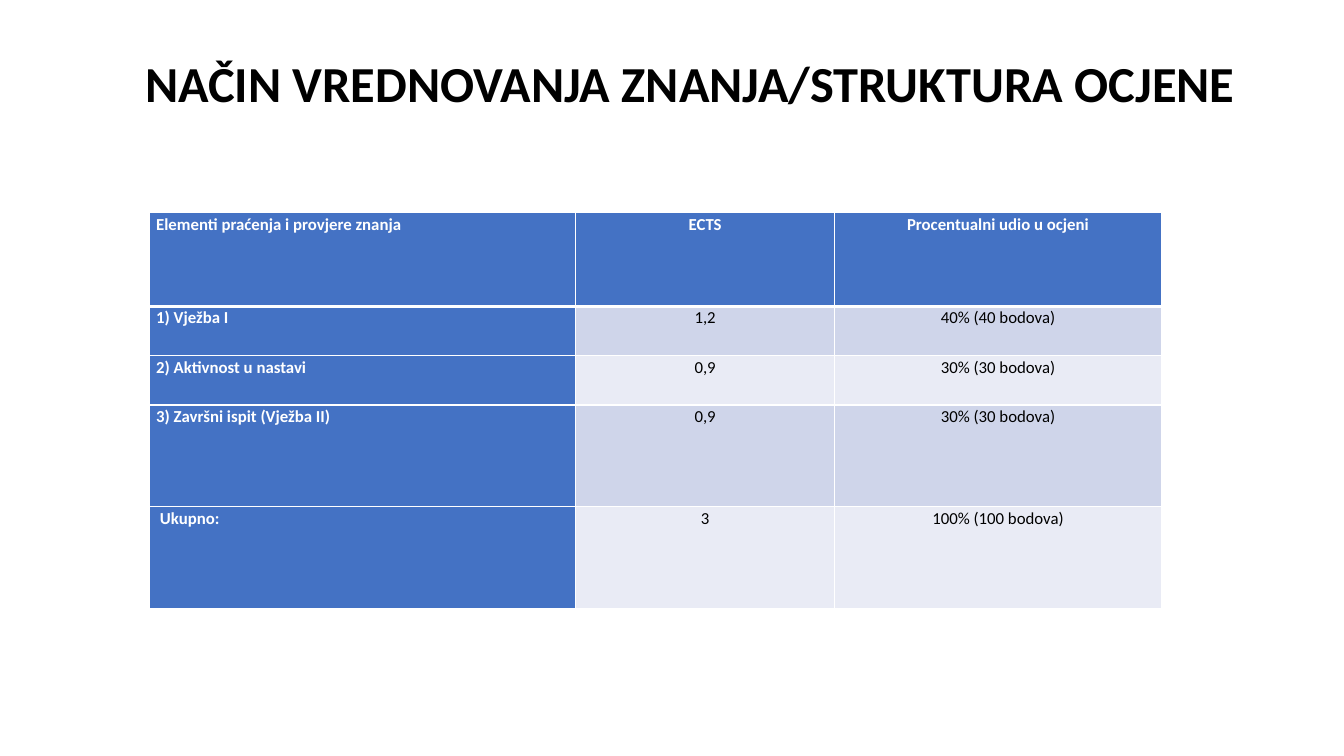
from dataclasses import dataclass

from lxml.etree import SubElement
from pptx import Presentation
from pptx.dml.color import RGBColor
from pptx.enum.text import MSO_ANCHOR, PP_ALIGN
from pptx.oxml.ns import qn
from pptx.util import Inches, Pt


@dataclass(frozen=True)
class Theme:
    font: str = "Calibri"
    title_size: int = 36
    table_size: int = 12
    ink: str = "000000"
    white: str = "FFFFFF"
    accent: str = "4472C4"
    bands: tuple = ("CFD5EA", "E9EBF5")
    thin_border: int = 1
    thick_border: int = 3


TITLE = "NAČIN VREDNOVANJA ZNANJA/STRUKTURA OCJENE"
GRADING = [
    ("Elementi praćenja i provjere znanja", "ECTS", "Procentualni udio u ocjeni"),
    ("1) Vježba I", "1,2", "40% (40 bodova)"),
    ("2) Aktivnost u nastavi", "0,9", "30% (30 bodova)"),
    ("3) Završni ispit (Vježba II)", "0,9", "30% (30 bodova)"),
    (" Ukupno:", "3", "100% (100 bodova)"),
]
# Percent of the slide's width and height
COLUMN_WIDTHS = (31.73, 19.28, 24.31)
ROW_HEIGHTS = (12.4, 6.53, 6.53, 13.47, 13.47)


class SlideBuilder:
    def __init__(self, presentation, theme):
        self.width = presentation.slide_width
        self.height = presentation.slide_height
        self.theme = theme
        self.slide = presentation.slides.add_slide(presentation.slide_layouts[6])

    def across(self, percent):
        return round(self.width * percent / 100)

    def down(self, percent):
        return round(self.height * percent / 100)

    def set_font(self, paragraph, size, color, bold):
        font = paragraph.font
        font.name, font.size, font.bold = self.theme.font, Pt(size), bold
        font.color.rgb = RGBColor.from_string(color)

    def title(self, text, left, top, width, height):
        box = self.slide.shapes.add_textbox(
            self.across(left), self.down(top), self.across(width), self.down(height))
        frame = box.text_frame
        frame.word_wrap = True
        frame.vertical_anchor = MSO_ANCHOR.TOP
        paragraph = frame.paragraphs[0]
        paragraph.text = text
        self.set_font(paragraph, self.theme.title_size, self.theme.ink, True)

    def table(self, rows, left, top, column_widths, row_heights):
        shape = self.slide.shapes.add_table(
            len(rows), len(column_widths), self.across(left), self.down(top),
            self.across(sum(column_widths)), self.down(sum(row_heights)))
        table = shape.table
        for column, width in zip(table.columns, column_widths):
            column.width = self.across(width)
        for row, height in zip(table.rows, row_heights):
            row.height = self.down(height)
        for row_index, texts in enumerate(rows):
            for column_index, text in enumerate(texts):
                self.cell(table.cell(row_index, column_index), text, row_index, column_index)

    def cell(self, cell, text, row_index, column_index):
        theme = self.theme
        is_heading = row_index == 0 or column_index == 0
        cell.margin_left = cell.margin_right = Inches(0.07)
        cell.margin_top = cell.margin_bottom = 0
        self.borders(cell, row_index)
        fill = theme.accent if is_heading else theme.bands[(row_index - 1) % 2]
        cell.fill.solid()
        cell.fill.fore_color.rgb = RGBColor.from_string(fill)
        paragraph = cell.text_frame.paragraphs[0]
        paragraph.text = text
        paragraph.alignment = PP_ALIGN.CENTER if column_index else PP_ALIGN.JUSTIFY
        paragraph.line_spacing = 1.07
        self.set_font(paragraph, theme.table_size,
                      theme.white if is_heading else theme.ink, is_heading)

    def borders(self, cell, row_index):
        """Draw white cell edges, with a thick one below the header row."""
        thick_edge = {0: "lnB", 1: "lnT"}.get(row_index)
        properties = cell._tc.get_or_add_tcPr()
        for edge in ("lnL", "lnR", "lnT", "lnB"):
            width = self.theme.thick_border if edge == thick_edge else self.theme.thin_border
            line = SubElement(properties, qn(f"a:{edge}"), w=str(Pt(width)))
            fill = SubElement(line, qn("a:solidFill"))
            SubElement(fill, qn("a:srgbClr"), val=self.theme.white)


def main():
    presentation = Presentation()
    presentation.slide_width = Inches(13.33)
    presentation.slide_height = Inches(7.5)
    builder = SlideBuilder(presentation, Theme())
    builder.table(GRADING, 11.1, 28.13, COLUMN_WIDTHS, ROW_HEIGHTS)
    builder.title(TITLE, 10.05, 6.27, 83.57, 13.47)
    presentation.save("out.pptx")


if __name__ == "__main__":
    main()
